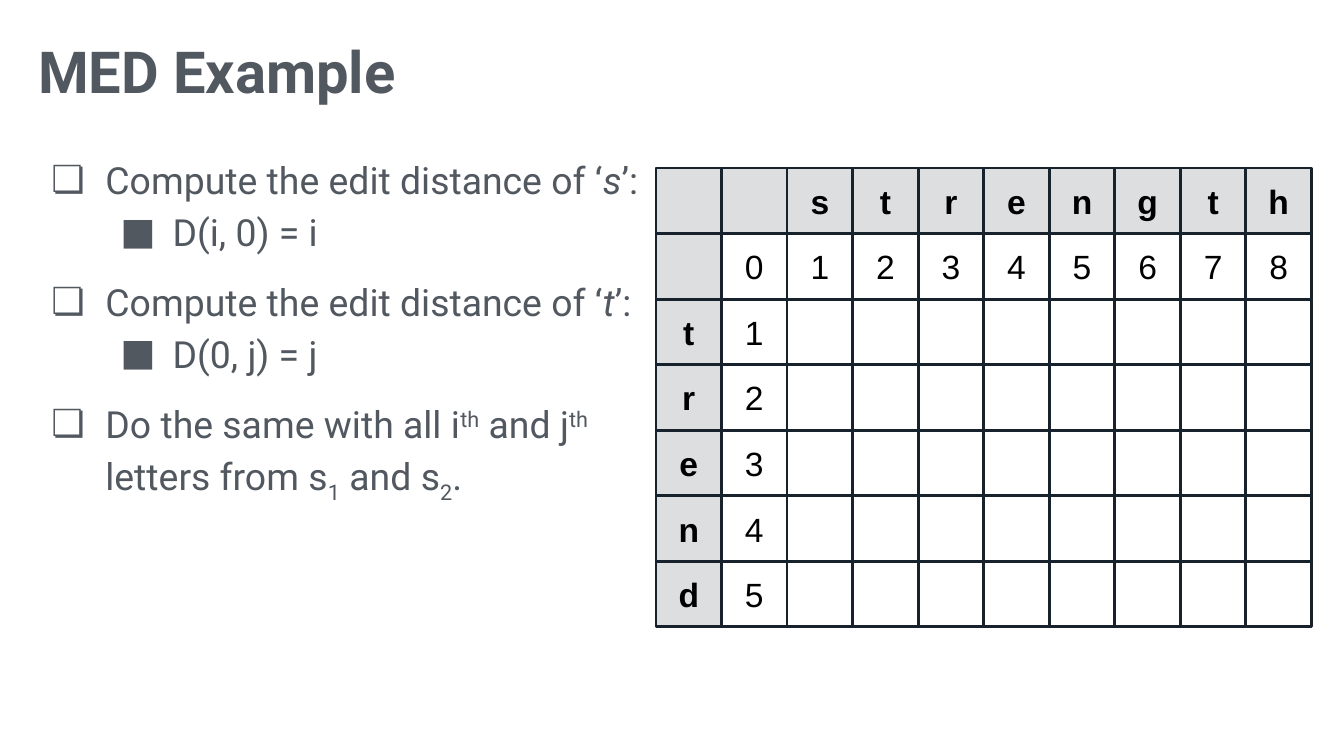
import lxml.etree
import pptx
import pptx.dml.color
import pptx.enum.shapes
import pptx.enum.text
import pptx.oxml.ns
import pptx.util

Pt = pptx.util.Pt
RGBColor = pptx.dml.color.RGBColor
qn = pptx.oxml.ns.qn

SLATE = RGBColor(0x52, 0x58, 0x60)
HEADER = RGBColor(0xDC, 0xDE, 0xE0)
BORDER = RGBColor(0x18, 0x22, 0x2D)
BLACK = RGBColor(0, 0, 0)
WHITE = RGBColor(0xFF, 0xFF, 0xFF)


def add_run(p, text, font="Roboto", size=20, color=SLATE, bold=False,
            italic=False, baseline=0):
    r = p.add_run()
    r.text = text
    r.font.name = font
    r.font.size = Pt(size)
    r.font.color.rgb = color
    r.font.bold = bold
    r.font.italic = italic
    if baseline:
        r._r.get_or_add_rPr().set("baseline", str(baseline * 1000))


class SlideBuilder:
    inset = 4.5
    levels = (("❏", 36, -29), ("■", 72, -28))  # bullet, margin, indent

    def __init__(self, prs):
        self.s = prs.slides.add_slide(prs.slide_layouts[6])
        self.s.background.fill.solid()
        self.s.background.fill.fore_color.rgb = WHITE

    def text_box(self, x, y, w, h):
        sp = self.s.shapes.add_textbox(Pt(x), Pt(y), Pt(w), Pt(h))
        tf = sp.text_frame
        tf.word_wrap = True
        tf.margin_left = tf.margin_right = Pt(self.inset)
        tf.margin_top = tf.margin_bottom = Pt(self.inset)
        return tf

    def title(self, text, x, y, w, h):
        tf = self.text_box(x, y, w, h)
        add_run(tf.paragraphs[0], text, size=31, bold=True)

    def bullets(self, items, x, y, w, h):
        tf = self.text_box(x, y, w, h)
        for i, (level, runs) in enumerate(items):
            p = tf.add_paragraph() if i else tf.paragraphs[0]
            char, margin, indent = self.levels[level]
            pPr = p._p.get_or_add_pPr()
            pPr.set("marL", str(Pt(margin)))
            pPr.set("indent", str(Pt(indent)))
            clr = lxml.etree.SubElement(pPr, qn("a:buClr"))
            lxml.etree.SubElement(clr, qn("a:srgbClr"), val=str(SLATE))
            lxml.etree.SubElement(pPr, qn("a:buFont"), typeface="Roboto")
            lxml.etree.SubElement(pPr, qn("a:buChar"), char=char)
            p.level = level
            p.line_spacing = 1.15
            if i and level == 0:
                p.space_before = Pt(10)
            for text, style in runs:
                add_run(p, text, **style)

    def cell(self, group, text, x, y, size, header):
        sp = group.shapes.add_shape(
            pptx.enum.shapes.MSO_SHAPE.RECTANGLE, Pt(x), Pt(y), Pt(size), Pt(size))
        sp.shadow.inherit = False
        sp.line.color.rgb = BORDER
        sp.line.width = Pt(1.5)
        if header:
            sp.fill.solid()
            sp.fill.fore_color.rgb = HEADER
        else:
            sp.fill.background()
        if text:
            tf = sp.text_frame
            tf.margin_left = tf.margin_right = Pt(7.2)
            tf.margin_top = tf.margin_bottom = Pt(7.2)
            tf.vertical_anchor = pptx.enum.text.MSO_ANCHOR.MIDDLE
            p = tf.paragraphs[0]
            p.alignment = pptx.enum.text.PP_ALIGN.CENTER
            add_run(p, text, font="Arial", size=18, color=BLACK, bold=header)

    def distance_grid(self, source, target, x, y, size):
        group = self.s.shapes.add_group_shape()
        # Two blank header cells, then the letters of each word
        rows, cols = ["", ""] + list(source), ["", ""] + list(target)
        for i, row_letter in enumerate(rows):
            for j, col_letter in enumerate(cols):
                if i == 0:
                    text = col_letter
                elif j == 0:
                    text = row_letter
                elif i == 1 or j == 1:
                    text = str(i + j - 2)
                else:
                    text = ""
                self.cell(group, text, x + j * size, y + i * size, size,
                          header=i == 0 or j == 0)


def main():
    prs = pptx.Presentation()
    prs.slide_width, prs.slide_height = Pt(720), Pt(405)
    slide = SlideBuilder(prs)

    # Title
    slide.title("MED Example", 16, 14.4, 686, 35.5)

    # Edit distance grid
    slide.distance_grid("trend", "strength", x=351.4, y=90, size=35.12)

    # Steps
    plain, italic = {}, {"italic": True}
    sup, sub = {"baseline": 30}, {"baseline": -25}
    steps = []
    for letter, rule in (("s", "D(i, 0) = i"), ("t", "D(0, j) = j")):
        steps.append((0, [("Compute the edit distance of ‘", plain),
                          (letter, italic), ("’:", plain)]))
        steps.append((1, [(rule, plain)]))
    steps.append((0, [("Do the same with all i", plain), ("th", sup),
                      (" and j", plain), ("th", sup),
                      (" letters from s", plain), ("1", sub),
                      (" and s", plain), ("2", sub), (".", plain)]))
    slide.bullets(steps, 16, 76.3, 335, 273.6)

    prs.save("out.pptx")


if __name__ == "__main__":
    main()
